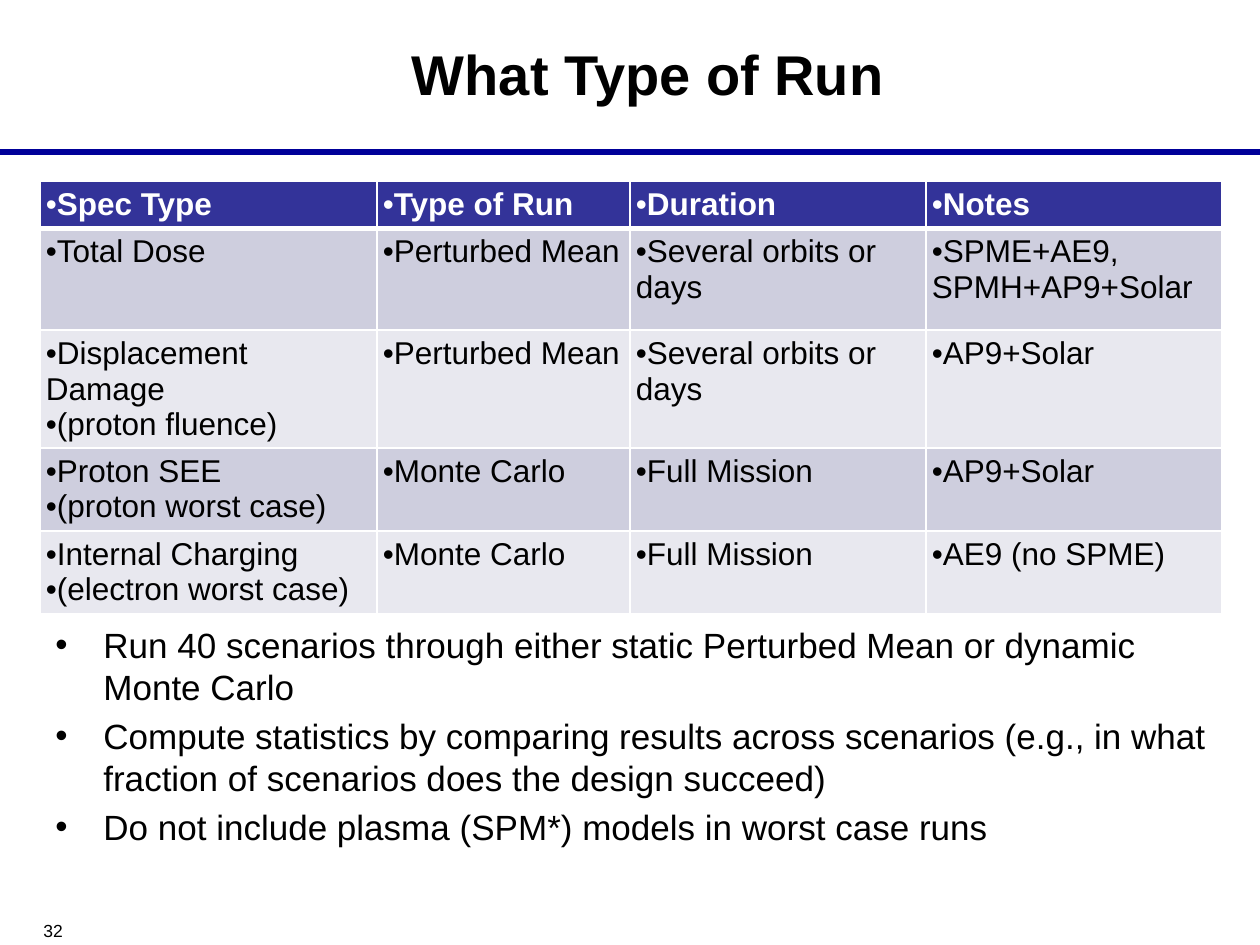
"""Build the "What Type of Run" slide with a run-type table and guidance bullets."""
from lxml import etree
from pptx import Presentation
from pptx.dml.color import RGBColor
from pptx.enum.shapes import MSO_SHAPE
from pptx.enum.text import MSO_ANCHOR, PP_ALIGN
from pptx.oxml.ns import qn
from pptx.util import Pt

RECTANGLE = MSO_SHAPE.RECTANGLE
MIDDLE = MSO_ANCHOR.MIDDLE
CENTER, LEFT = PP_ALIGN.CENTER, PP_ALIGN.LEFT
PX = 914400 / 126
FONT = "Arial"
COLORS = {"text": "000000", "white": "FFFFFF", "rule": "000099",
          "header": "333399", "dark_band": "CECEDE", "light_band": "E8E8EF"}

TITLE = "What Type of Run"
SLIDE_NUMBER = "32"
HEADER = ["Spec Type", "Type of Run", "Duration", "Notes"]
ROWS = [
    [["Total Dose"], ["Perturbed Mean"], ["Several orbits or days"],
     ["SPME+AE9, SPMH+AP9+Solar"]],
    [["Displacement Damage", "(proton fluence)"], ["Perturbed Mean"],
     ["Several orbits or days"], ["AP9+Solar"]],
    [["Proton SEE", "(proton worst case)"], ["Monte Carlo"], ["Full Mission"], ["AP9+Solar"]],
    [["Internal Charging", "(electron worst case)"], ["Monte Carlo"], ["Full Mission"],
     ["AE9 (no SPME)"]],
]
BULLETS = [
    "Run 40 scenarios through either static Perturbed Mean or dynamic Monte Carlo",
    "Compute statistics by comparing results across scenarios "
    "(e.g., in what fraction of scenarios does the design succeed)",
    "Do not include plasma (SPM*) models in worst case runs",
]
COLUMN_WIDTHS = [337, 253, 296, 296]
ROW_HEIGHTS = [47, 102, 118, 83, 83]


def px(value):
    return round(value * PX)


def box(*lengths):
    return [px(length) for length in lengths]


def color(name):
    return RGBColor.from_string(COLORS[name])


def add_bullet(paragraph, indent=0):
    properties = paragraph._p.get_or_add_pPr()
    properties.set("marL", str(px(indent)))
    properties.set("indent", str(-px(indent)))
    etree.SubElement(properties, qn("a:buFont"), typeface=FONT)
    etree.SubElement(properties, qn("a:buChar"), char="•")


def write(frame, lines, size, color_name="text", bold=False, align=LEFT,
          bullet_indent=None, gap=0):
    for index, line in enumerate(lines):
        paragraph = frame.add_paragraph() if index else frame.paragraphs[0]
        paragraph.alignment = align
        if index and gap:
            paragraph.space_before = Pt(gap)
        if bullet_indent is not None:
            add_bullet(paragraph, bullet_indent)
        run = paragraph.add_run()
        run.text = line
        run.font.name = FONT
        run.font.size = Pt(size)
        run.font.bold = bold
        run.font.color.rgb = color(color_name)


def add_text_box(slide, place, lines, size, **style):
    frame = slide.shapes.add_textbox(*place).text_frame
    frame.word_wrap = True
    write(frame, lines, size, **style)


def set_borders(cell, bottom_width):
    properties = cell._tc.get_or_add_tcPr()
    widths = {"lnL": 1, "lnR": 1, "lnT": 1, "lnB": bottom_width}
    for position, (side, width) in enumerate(widths.items()):
        line = etree.Element(qn(f"a:{side}"), w=str(Pt(width)))
        fill = etree.SubElement(line, qn("a:solidFill"))
        etree.SubElement(fill, qn("a:srgbClr"), val=COLORS["white"])
        properties.insert(position, line)


def add_run_table(slide):
    place = box(40, 181, sum(COLUMN_WIDTHS), sum(ROW_HEIGHTS))
    table = slide.shapes.add_table(len(ROW_HEIGHTS), len(COLUMN_WIDTHS), *place).table
    for column, width in zip(table.columns, COLUMN_WIDTHS):
        column.width = px(width)
    for row, height in zip(table.rows, ROW_HEIGHTS):
        row.height = px(height)
    contents = [[[label] for label in HEADER]] + ROWS
    for row_index, row in enumerate(contents):
        is_header = row_index == 0
        band = "header" if is_header else ("light_band", "dark_band")[row_index % 2]
        for column_index, lines in enumerate(row):
            cell = table.cell(row_index, column_index)
            cell.margin_left = cell.margin_right = px(6)
            cell.margin_top = cell.margin_bottom = px(6)
            cell.fill.solid()
            cell.fill.fore_color.rgb = color(band)
            set_borders(cell, 3 if is_header else 1)
            write(cell.text_frame, lines, 18, "white" if is_header else "text",
                  bold=is_header, bullet_indent=0)


def main():
    presentation = Presentation()
    presentation.slide_width, presentation.slide_height = box(1260, 945)
    slide = presentation.slides.add_slide(presentation.slide_layouts[5])

    title = slide.shapes.title
    title.left, title.top, title.width, title.height = box(186, 37, 924, 84)
    title.text_frame.vertical_anchor = MIDDLE
    write(title.text_frame, [TITLE], 32, bold=True, align=CENTER)
    title.text_frame.paragraphs[0].line_spacing = 0.8

    rule = slide.shapes.add_shape(RECTANGLE, *box(0, 149, 1260, 6))
    rule.shadow.inherit = False
    rule.fill.solid()
    rule.fill.fore_color.rgb = color("rule")
    rule.line.fill.background()

    add_run_table(slide)
    add_text_box(slide, box(43, 617, 1183, 286), BULLETS, 20, bullet_indent=48, gap=4)
    add_text_box(slide, box(31, 914, 136, 34), [SLIDE_NUMBER], 10)
    presentation.save("out.pptx")


if __name__ == "__main__":
    main()
